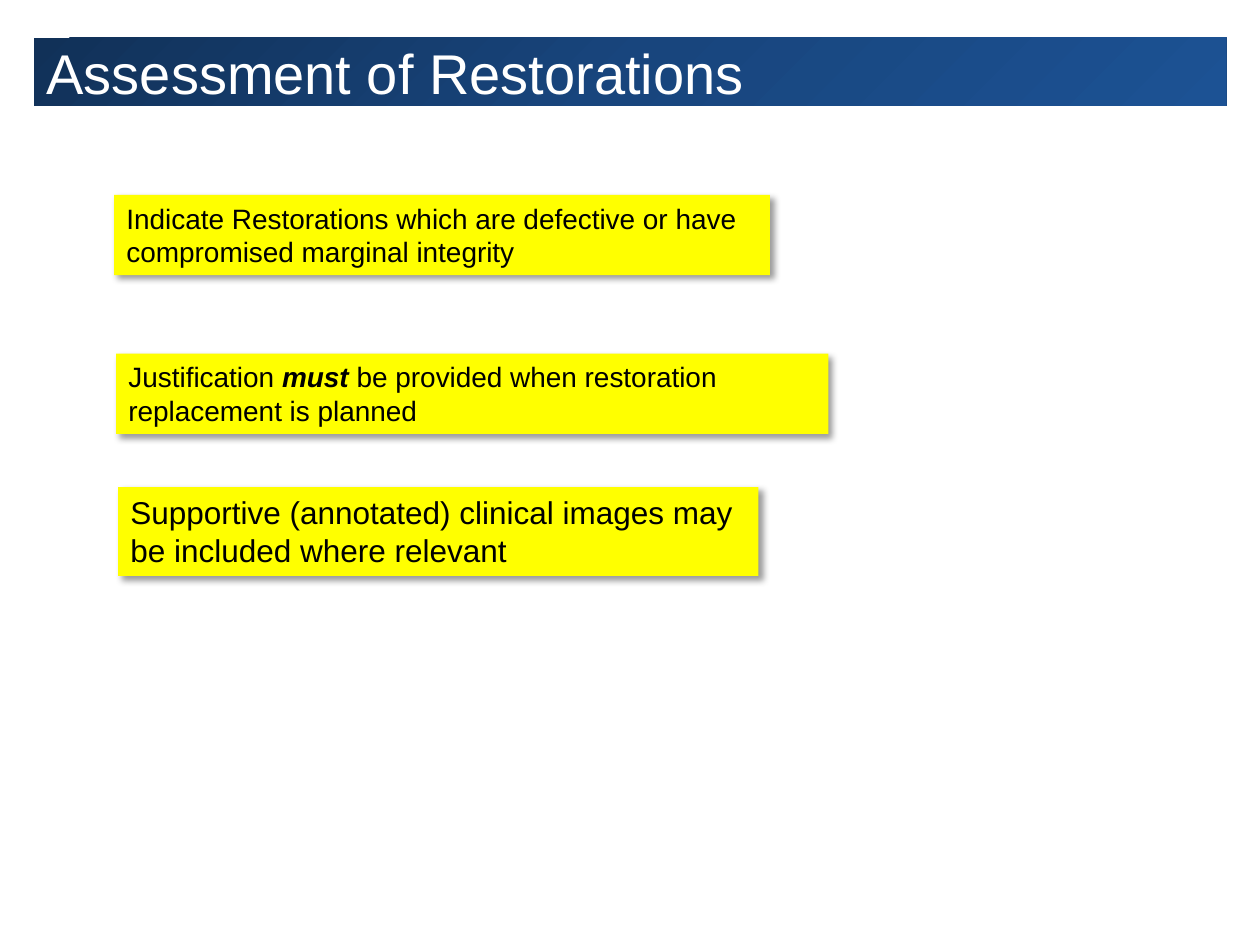
from pptx import Presentation
from pptx.dml.color import RGBColor
from pptx.enum.shapes import MSO_SHAPE
from pptx.enum.text import MSO_ANCHOR, MSO_AUTO_SIZE, PP_ALIGN
from pptx.oxml import parse_xml
from pptx.oxml.ns import nsdecls
from pptx.util import Cm, Pt

BLACK = RGBColor(0x00, 0x00, 0x00)
WHITE = RGBColor(0xFF, 0xFF, 0xFF)
YELLOW = RGBColor(0xFF, 0xFF, 0x00)
BANNER_BLUES = [
    RGBColor(0x11, 0x31, 0x58),
    RGBColor(0x18, 0x45, 0x7D),
    RGBColor(0x1C, 0x52, 0x94),
]


def add_text_box(page, paragraphs, left, top, width, height, size=16,
                 color=BLACK, anchor=MSO_ANCHOR.TOP, grow=True):
    """Add a rectangle; each paragraph is a list of (text, emphasized) spans."""
    box = page.shapes.add_shape(
        MSO_SHAPE.RECTANGLE, Cm(left), Cm(top), Cm(width), Cm(height))
    box.shadow.inherit = False
    box.line.fill.background()
    frame = box.text_frame
    frame.word_wrap = True
    frame.vertical_anchor = anchor
    frame.auto_size = (
        MSO_AUTO_SIZE.SHAPE_TO_FIT_TEXT if grow else MSO_AUTO_SIZE.NONE)
    for index, spans in enumerate(paragraphs):
        para = frame.add_paragraph() if index else frame.paragraphs[0]
        para.alignment = PP_ALIGN.LEFT
        for text, emphasized in spans:
            span = para.add_run()
            span.text = text
            span.font.name = "Arial"
            span.font.size = Pt(size)
            span.font.color.rgb = color
            span.font.bold = span.font.italic = emphasized
    return box


deck = Presentation()
deck.slide_width = Cm(25.4)
deck.slide_height = Cm(19.05)
page = deck.slides.add_slide(deck.slide_layouts[6])

# Title banner with a three-stop diagonal gradient
banner = add_text_box(
    page, [[("Assessment of Restorations", False)]], 0.69, 0.76, 24.03, 1.37,
    size=32, color=WHITE, anchor=MSO_ANCHOR.MIDDLE, grow=False)
banner.fill.gradient()
banner.fill.gradient_angle = 315  # counter-clockwise: towards lower right
stops = banner.fill._fill._gradFill.gsLst
for stop in list(stops):
    stops.remove(stop)
for index, blue in enumerate(BANNER_BLUES):
    stops.append(parse_xml(
        f'<a:gs {nsdecls("a")} pos="{index * 50000}">'
        f'<a:srgbClr val="{blue}"/></a:gs>'))

# Yellow notes: paragraphs, left, top, width, height, text size
notes = [
    ([[("Justification ", False), ("must ", True),
       ("be provided when restoration replacement is planned", False)]],
     2.34, 7.13, 14.36, 1.62, 16),
    ([[("Indicate Restorations which are defective or have "
        "compromised marginal integrity", False)]],
     2.3, 3.93, 13.22, 1.62, 16),
    ([[("Supportive (annotated) clinical images may", False)],
      [("be included where relevant", False)]],
     2.38, 9.82, 12.91, 1.79, 18),
]
for paragraphs, left, top, width, height, size in notes:
    note = add_text_box(page, paragraphs, left, top, width, height, size=size)
    note.fill.solid()
    note.fill.fore_color.rgb = YELLOW
    # Soft shadow towards the lower right
    effects = note._element.spPr.find(
        "{http://schemas.openxmlformats.org/drawingml/2006/main}effectLst")
    effects.append(parse_xml(
        f'<a:outerShdw {nsdecls("a")} blurRad="{Pt(4)}" dist="{Pt(3)}" '
        f'dir="2700000" algn="tl" rotWithShape="0"><a:srgbClr val="{BLACK}">'
        '<a:alpha val="40000"/></a:srgbClr></a:outerShdw>'))

deck.save("out.pptx")
